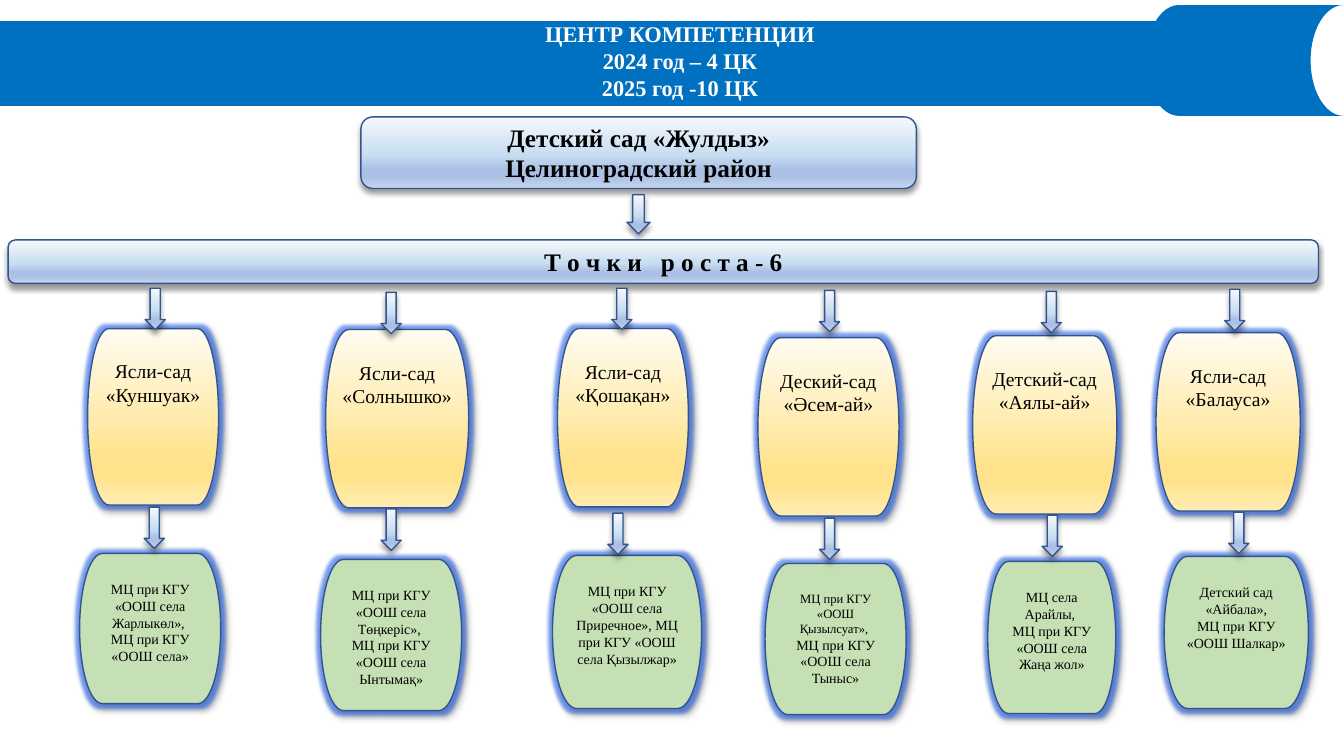
from dataclasses import dataclass

from lxml import etree
from pptx import Presentation
from pptx.dml.color import RGBColor
from pptx.enum.shapes import MSO_SHAPE
from pptx.enum.text import MSO_ANCHOR, PP_ALIGN
from pptx.oxml.ns import qn
from pptx.util import Pt


@dataclass(frozen=True)
class Theme:
    font: str = "Times New Roman"
    banner: str = "0070C0"
    white: str = "FFFFFF"
    black: str = "000000"
    outline: str = "325491"
    glow: str = "2F6BEE"
    blue: tuple = ((0, "F6F8FC"), (54, "C7DDF1"), (74, "ABC0E4"),
                   (83, "ABC0E4"), (100, "C7D5ED"))
    yellow: tuple = ((0, "FFFCF2"), (74, "FFE38C"), (83, "FFE38C"), (100, "FFECB2"))
    green: str = "C5E0B4"
    header_size: int = 16
    title_size: int = 18
    garden_size: int = 14
    centre_size: int = 10
    small_size: int = 9


theme = Theme()
ARROW_SIZE = (14.4, 29.5)

deck = Presentation()
deck.slide_width, deck.slide_height = Pt(960), Pt(540)
slide = deck.slides.add_slide(deck.slide_layouts[6])


def add_part(kind, box, fill, shadow_angle=None, glow=False):
    """Add a shape; a tuple fill is a gradient, a shadow angle also brings an outline."""
    part = slide.shapes.add_shape(kind, *[Pt(length) for length in box])
    part.shadow.inherit = False
    if isinstance(fill, tuple):
        part.fill.gradient()
        part.fill.gradient_angle = 270
        stops = part.element.spPr.find(qn("a:gradFill")).find(qn("a:gsLst"))
        for stop in list(stops):
            stops.remove(stop)
        for position, colour in fill:
            stop = etree.SubElement(stops, qn("a:gs"), pos=str(position * 1000))
            etree.SubElement(stop, qn("a:srgbClr"), val=colour)
    else:
        part.fill.solid()
        part.fill.fore_color.rgb = RGBColor.from_string(fill)
    if shadow_angle is None:
        part.line.fill.background()
        return part
    part.line.color.rgb = RGBColor.from_string(theme.outline)
    part.line.width = Pt(1)
    shadow = {"blurRad": Pt(4), "dist": Pt(3), "dir": shadow_angle * 60000,
              "algn": "ctr", "rotWithShape": 0}
    effects = [("a:outerShdw", shadow, theme.black, 40)]
    if glow:
        effects.insert(0, ("a:glow", {"rad": Pt(5)}, theme.glow, 60))
    effect_list = part.element.spPr.find(qn("a:effectLst"))
    for tag, settings, colour, alpha in effects:
        effect = etree.SubElement(effect_list, qn(tag),
                                  {key: str(value) for key, value in settings.items()})
        tint = etree.SubElement(effect, qn("a:srgbClr"), val=colour)
        etree.SubElement(tint, qn("a:alpha"), val=str(alpha * 1000))
    return part


def write(part, lines, size, anchor=MSO_ANCHOR.TOP, bold=False, colour=theme.black):
    """Fill a part with centred lines; a line is a string or a (string, size) pair."""
    frame = part.text_frame
    for key, value in {"word_wrap": True, "vertical_anchor": anchor}.items():
        setattr(frame, key, value)
    for number, line in enumerate(lines):
        text, line_size = line if isinstance(line, tuple) else (line, size)
        paragraph = frame.paragraphs[0] if number == 0 else frame.add_paragraph()
        paragraph.alignment = PP_ALIGN.CENTER
        # A tab mark separates words that need a wider gap
        for piece in text.replace("\t", "\t \t").split("\t"):
            run = paragraph.add_run()
            run.text = piece
            style = {"name": theme.font, "size": Pt(line_size), "bold": bold}
            for key, value in style.items():
                setattr(run.font, key, value)
            run.font.color.rgb = RGBColor.from_string(colour)
            if piece == " ":
                run.font._element.set("spc", "900")


# Header banner
add_part(MSO_SHAPE.RECTANGLE, (0, 15.1, 905.8, 60.5), theme.banner)
add_part(MSO_SHAPE.FLOWCHART_STORED_DATA, (818.6, 3.6, 141.1, 79.2), theme.banner)
header = slide.shapes.add_textbox(Pt(56.2), Pt(10.8), Pt(859), Pt(67.7))
write(header, ["ЦЕНТР КОМПЕТЕНЦИИ", "2024 год – 4 ЦК", "2025 год -10 ЦК"],
      theme.header_size, bold=True, colour=theme.white)

# Lead kindergarten and the growth points bar
lead = add_part(MSO_SHAPE.ROUNDED_RECTANGLE, (257.8, 83.5, 396.7, 51.1), theme.blue, 90)
write(lead, ["Детский сад «Жулдыз»", "Целиноградский район"],
      theme.title_size, MSO_ANCHOR.MIDDLE, True)
add_part(MSO_SHAPE.DOWN_ARROW, (447.8, 139, 16.6, 28.1), theme.blue, 90)
growth = add_part(MSO_SHAPE.ROUNDED_RECTANGLE, (5.8, 171.4, 936, 31), theme.blue, 90)
write(growth, ["Т о ч к и\tр о с т а - 6"], theme.title_size, MSO_ANCHOR.MIDDLE, True)

# Growth points: garden name, garden box, centre lines, centre box, two arrow corners
branches = [
    ("Ясли-сад «Куншуак»", (62.6, 234.7, 93.6, 126),
     ["МЦ при КГУ «ООШ села Жарлыкөл», ", "МЦ при КГУ «ООШ села»"],
     (56.9, 395.3, 100.8, 107.3), (103.7, 205.9), (103, 362.2)),
    ("Ясли-сад «Солнышко»", (232.6, 235.4, 102.2, 127.4),
     ["МЦ при КГУ «ООШ села Төңкеріс», ", "МЦ при КГУ «ООШ села Ынтымақ»"],
     (229, 399.6, 100.8, 108), (272.2, 208.8), (272.2, 363.6)),
    ("Ясли-сад «Қошақан»", (398.2, 234.7, 93.6, 127.4),
     ["МЦ при КГУ «ООШ села Приречное», МЦ при КГУ «ООШ села Қызылжар»"],
     (394.6, 396.7, 106.6, 109.4), (437, 205.9), (434.2, 366.5)),
    ("Деский-сад «Әсем-ай»", (541.4, 241.2, 100.8, 127.4),
     [("МЦ при КГУ «ООШ Қызылсуат», ", theme.small_size), "МЦ при КГУ «ООШ села Тыныс»"],
     (546.5, 402.5, 100.8, 108), (585.4, 207.4), (585.4, 370.1)),
    ("Детский-сад «Аялы-ай»", (694.8, 239.8, 103, 127.4),
     ["МЦ села Арайлы, ", "МЦ при КГУ «ООШ села Жаңа жол»"],
     (705.6, 401, 91.4, 108.7), (743.8, 208.1), (744.5, 367.9)),
    ("Ясли-сад «Балауса»", (825.8, 237.6, 103, 127.4),
     ["Детский сад «Айбала»,", "МЦ при КГУ «ООШ Шалкар»"],
     (831.6, 397.4, 103, 108.7), (874.8, 206.6), (877.7, 365.8)),
]
for garden_name, garden_box, centre_lines, centre_box, *arrow_corners in branches:
    garden = add_part(MSO_SHAPE.FLOWCHART_TERMINATOR, garden_box, theme.yellow, 45, True)
    write(garden, [garden_name], theme.garden_size)
    centre = add_part(MSO_SHAPE.FLOWCHART_TERMINATOR, centre_box, theme.green, 45, True)
    write(centre, centre_lines, theme.centre_size)
    for corner in arrow_corners:
        add_part(MSO_SHAPE.DOWN_ARROW, corner + ARROW_SIZE, theme.blue, 90)

deck.save("out.pptx")
